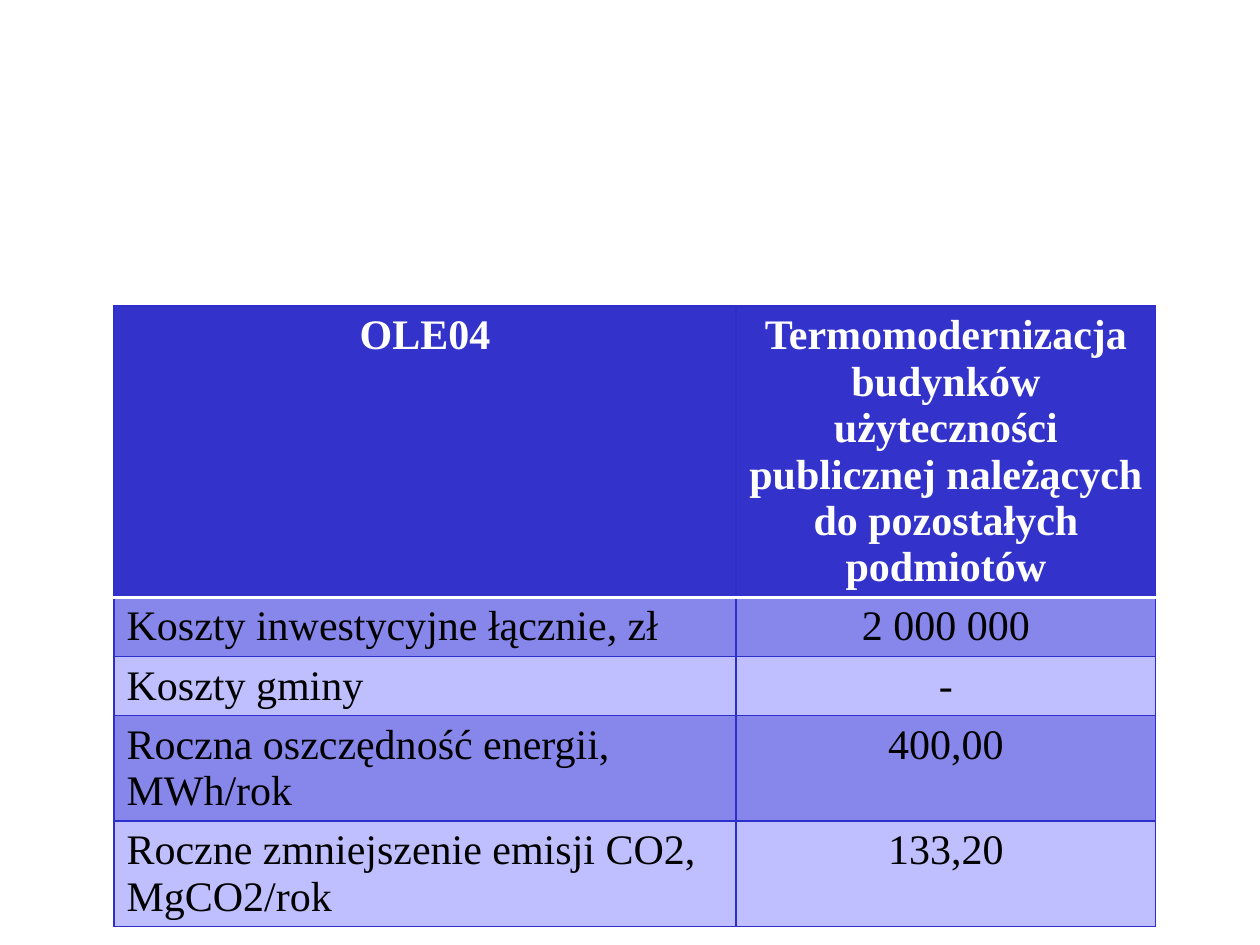
"""Build a slide with the cost and savings table of measure OLE04."""
from dataclasses import dataclass

import pptx
import pptx.dml.color
import pptx.enum.text
import pptx.oxml.ns
import pptx.util
from lxml import etree

RGB = pptx.dml.color.RGBColor
ALIGN = pptx.enum.text.PP_ALIGN
WHITE = RGB(0xFF, 0xFF, 0xFF)
BLACK = RGB(0x00, 0x00, 0x00)
HEAD = RGB(0x33, 0x33, 0xCC)
DARK = RGB(0x87, 0x87, 0xEB)
LIGHT = RGB(0xBF, 0xBF, 0xFF)
EDGE = RGB(0x2E, 0x2E, 0xCB)
FONT = "Times New Roman"
COLS = (622, 420)
LEFT, TOP = 114, 306


@dataclass(frozen=True)
class Row:
    """A label with its value and the look of the row."""
    label: str
    value: str
    fill: RGB
    high: int = 52
    head: bool = False


ROWS = (
    Row("OLE04", "Termomodernizacja budynków użyteczności publicznej "
        "należących do pozostałych podmiotów", HEAD, 106, True),
    Row("Koszty inwestycyjne łącznie, zł", "2 000 000", DARK),
    Row("Koszty gminy", "-", LIGHT),
    Row("Roczna oszczędność energii, MWh/rok", "400,00", DARK),
    Row("Roczne zmniejszenie emisji CO2, MgCO2/rok", "133,20", LIGHT),
)


def px(num: int) -> pptx.util.Emu:
    """Turn px into EMU."""
    return pptx.util.Emu(round(num * 914400 / 126))


def write(frame, text: str, *, color: RGB, bold: bool, align: ALIGN) -> None:
    """Put formatted text into a frame."""
    para = frame.paragraphs[0]
    para.alignment = align
    run = para.add_run()
    run.text = text
    run.font.name = FONT
    run.font.size = pptx.util.Pt(24)
    run.font.bold = bold
    run.font.color.rgb = color


def edge(cell, side: str, color: RGB, width: float) -> None:
    """Draw one border of a cell."""
    qn = pptx.oxml.ns.qn
    props = cell._tc.get_or_add_tcPr()
    line = etree.SubElement(props, qn(f"a:ln{side}"), w=str(pptx.util.Pt(width)))
    fill = etree.SubElement(line, qn("a:solidFill"))
    etree.SubElement(fill, qn("a:srgbClr"), val=str(color))


def draw(table, at: int, row: Row) -> None:
    """Fill one row of the table."""
    table.rows[at].height = px(row.high)
    white = {"B"} if row.head else {"T"} if at == 1 else set()
    for col, text in enumerate((row.label, row.value)):
        cell = table.cell(at, col)
        for side in "LRTB":
            edge(cell, side, *((WHITE, 2) if side in white else (EDGE, 0.75)))
        cell.fill.solid()
        cell.fill.fore_color.rgb = row.fill
        write(cell.text_frame, text, color=WHITE if row.head else BLACK,
              bold=row.head,
              align=ALIGN.CENTER if row.head or col else ALIGN.LEFT)


def main() -> None:
    """Build and save the deck."""
    deck = pptx.Presentation()
    deck.slide_width, deck.slide_height = px(1260), px(945)
    slide = deck.slides.add_slide(deck.slide_layouts[6])
    high = sum(row.high for row in ROWS)
    table = slide.shapes.add_table(len(ROWS), len(COLS), px(LEFT), px(TOP),
                                   px(sum(COLS)), px(high)).table
    table.horz_banding = False
    for col, wide in zip(table.columns, COLS):
        col.width = px(wide)
    for at, row in enumerate(ROWS):
        draw(table, at, row)
    deck.save("out.pptx")


if __name__ == "__main__":
    main()
